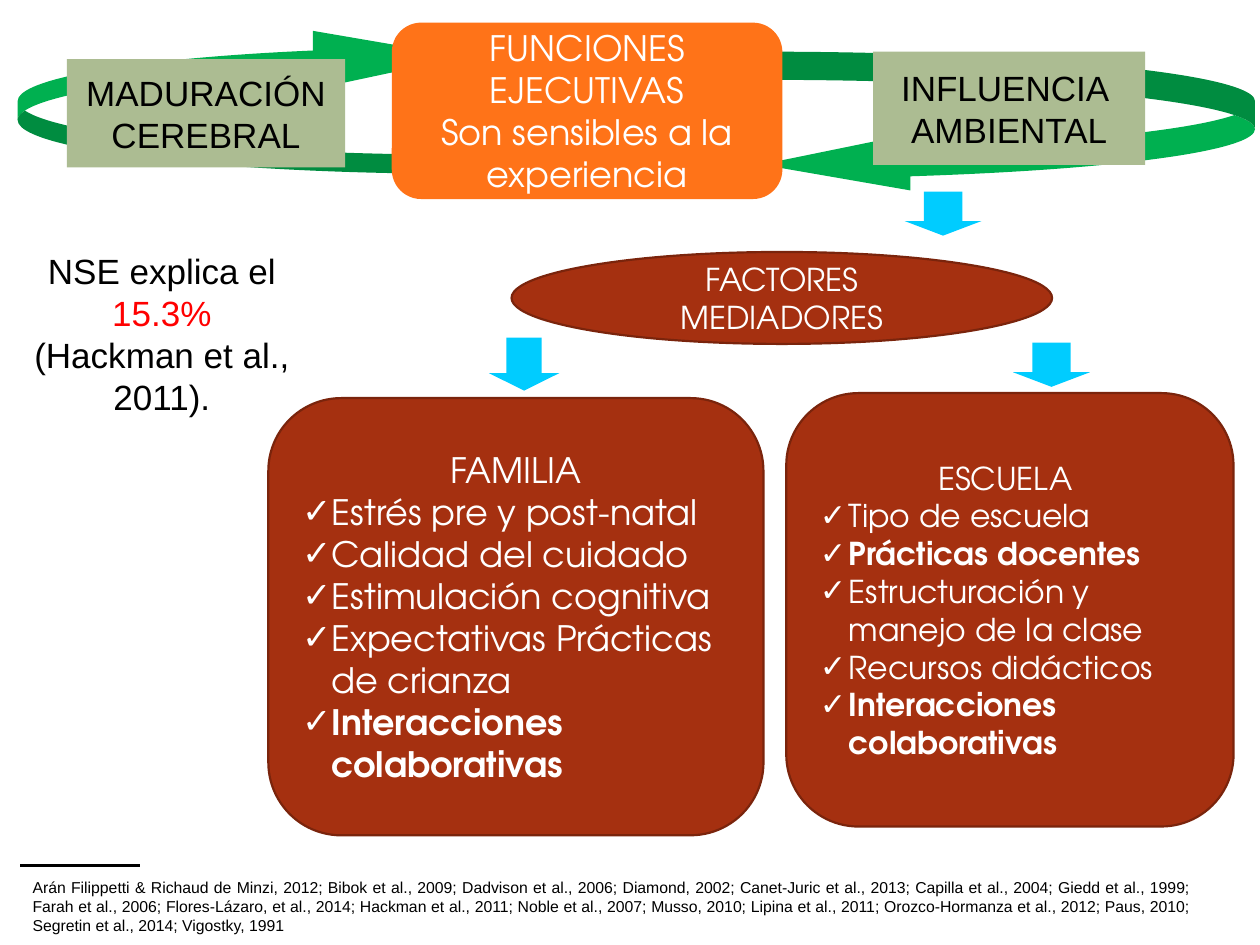
from lxml import etree
from pptx import Presentation
from pptx.dml.color import RGBColor
from pptx.enum.shapes import MSO_CONNECTOR, MSO_SHAPE
from pptx.enum.text import MSO_ANCHOR, PP_ALIGN
from pptx.oxml.ns import qn
from pptx.util import Inches, Pt

COLORS = {"green": "00B050", "sage": "ACBC92", "brick": "A53010", "brick_edge": "7A240C",
          "orange": "FF7318", "cyan": "00CCFF", "red": "FF0000",
          "black": "000000", "white": "FFFFFF"}
DISPLAY_FONT = "TeX Gyre Adventor"
CHECK_INDENT = Inches(0.23)

presentation = Presentation()
presentation.slide_width, presentation.slide_height = Inches(10), Inches(7.5)
slide = presentation.slides.add_slide(presentation.slide_layouts[6])


def add_box(kind, box, fill, edge=None, adjustments=()):
    """Add a flat preset shape, outlined only when an edge colour is given."""
    shape = slide.shapes.add_shape(kind, *map(Inches, box))
    shape.shadow.inherit = False
    shape.fill.solid()
    shape.fill.fore_color.rgb = RGBColor.from_string(COLORS[fill])
    if edge:
        shape.line.color.rgb = RGBColor.from_string(COLORS[edge])
        shape.line.width = Pt(1.25)
    else:
        shape.line.fill.background()
    for index, value in enumerate(adjustments):
        shape.adjustments[index] = value
    return shape


def write(shape, lines, size, font, color, align=PP_ALIGN.CENTER, anchor=MSO_ANCHOR.MIDDLE,
          wrap=True):
    """Fill a shape; a line is a list of runs (text, formats), with "✓" first for a check item."""
    frame = shape.text_frame
    frame.word_wrap, frame.vertical_anchor = wrap, anchor
    for index, runs in enumerate(lines):
        paragraph = frame.add_paragraph() if index else frame.paragraphs[0]
        paragraph.alignment = align
        if runs[0] == "✓":
            runs = runs[1:]
            paragraph.alignment = PP_ALIGN.LEFT
            properties = paragraph._p.get_or_add_pPr()
            properties.set("marL", str(CHECK_INDENT))
            properties.set("indent", str(-CHECK_INDENT))
            etree.SubElement(properties, qn("a:buFont")).set("typeface", "Arial")
            etree.SubElement(properties, qn("a:buChar")).set("char", "✓")
        for text, formats in runs:
            run = paragraph.add_run()
            run.text = text
            values = {"size": Pt(size), "name": font, "bold": False, "color": color, **formats}
            run.font.color.rgb = RGBColor.from_string(COLORS[values.pop("color")])
            for name, value in values.items():
                setattr(run.font, name, value)


# Curved arrows linking the three top boxes
left_loop = add_box(MSO_SHAPE.CURVED_RIGHT_ARROW, (0.14, 0.22, 3.55, 1.16), "green",
                    adjustments=(0.131, 0.4, 1.04))
left_loop._element.spPr.find(qn("a:xfrm")).set("flipV", "1")
add_box(MSO_SHAPE.CURVED_LEFT_ARROW, (6.04, 0.41, 3.92, 1.12), "green",
        adjustments=(0.2, 0.4, 1.059))

# Influences on either side
for box, words in [((0.53, 0.47, 2.21, 0.86), ("MADURACIÓN", "CEREBRAL")),
                   ((6.93, 0.41, 2.16, 0.9), ("INFLUENCIA ", "AMBIENTAL"))]:
    influence = add_box(MSO_SHAPE.RECTANGLE, box, "sage")
    write(influence, [[(word, {})] for word in words], 20, "Arial", "black", wrap=False)

# Socioeconomic finding
finding = slide.shapes.add_textbox(Inches(0.16), Inches(1.93), Inches(2.25), Inches(1.39))
write(finding, [[("NSE explica el ", {}), ("15.3% ", {"color": "red"}),
                 ("(Hackman et al., 2011).", {})]],
      20, "Arial", "black", anchor=MSO_ANCHOR.TOP)

# References under a short rule
references = slide.shapes.add_textbox(Inches(0.16), Inches(7.01), Inches(9.38), Inches(0.36))
citations = (
    "Arán Filippetti & Richaud de Minzi, 2012; Bibok et al., 2009; Dadvison et al., 2006; "
    "Diamond, 2002; Canet-Juric et al., 2013; Capilla et al., 2004; Giedd et al., 1999; "
    "Farah et al., 2006; Flores-Lázaro, et al., 2014; Hackman et al., 2011; Noble et al., 2007; "
    "Musso, 2010; Lipina et al., 2011; Orozco-Hormanza et al., 2012; Paus, 2010; "
    "Segretin et al., 2014; Vigostky, 1991")
write(references, [[(citations, {})]], 9, "Arial", "black", align=PP_ALIGN.JUSTIFY)
rule = slide.shapes.add_connector(MSO_CONNECTOR.STRAIGHT, Inches(0.16), Inches(6.87),
                                  Inches(1.11), Inches(6.87))
rule.line.color.rgb = RGBColor.from_string(COLORS["black"])
rule.line.width = Pt(1.75)
etree.SubElement(rule._element.spPr, qn("a:effectLst"))

# Mediating factors: heading, family and school
mediators = add_box(MSO_SHAPE.OVAL, (4.06, 2, 4.29, 0.73), "brick", "brick_edge")
write(mediators, [[("FACTORES MEDIADORES", {})]], 18, DISPLAY_FONT, "white")

BOLD_ITEMS = {"Prácticas docentes", "Interacciones colaborativas"}
PANELS = [
    ((2.13, 3.16, 3.93, 3.47), 20, "FAMILIA",
     ["Estrés pre y post-natal", "Calidad del cuidado", "Estimulación cognitiva",
      "Expectativas Prácticas de crianza", "Interacciones colaborativas"]),
    ((6.24, 3.12, 3.55, 3.44), 18, "ESCUELA ",
     ["Tipo de escuela", "Prácticas docentes", "Estructuración y manejo de la clase",
      "Recursos didácticos", "Interacciones colaborativas"]),
]
for box, size, heading, items in PANELS:
    panel = add_box(MSO_SHAPE.ROUNDED_RECTANGLE, box, "brick", "brick_edge")
    checks = [["✓", (item, {"bold": item in BOLD_ITEMS})] for item in items]
    write(panel, [[(heading, {})], *checks], size, DISPLAY_FONT, "white")

# Executive functions
functions = add_box(MSO_SHAPE.ROUNDED_RECTANGLE, (3.11, 0.18, 3.1, 1.4), "orange")
write(functions, [[("FUNCIONES EJECUTIVAS", {})], [("Son sensibles a la experiencia", {})]],
      20, DISPLAY_FONT, "white")

# Down arrows
for box in [(3.88, 2.68, 0.56, 0.42), (8.04, 2.72, 0.61, 0.35), (7.18, 1.52, 0.61, 0.35)]:
    add_box(MSO_SHAPE.DOWN_ARROW, box, "cyan", adjustments=(0.5, 0.33))

presentation.save("out.pptx")
